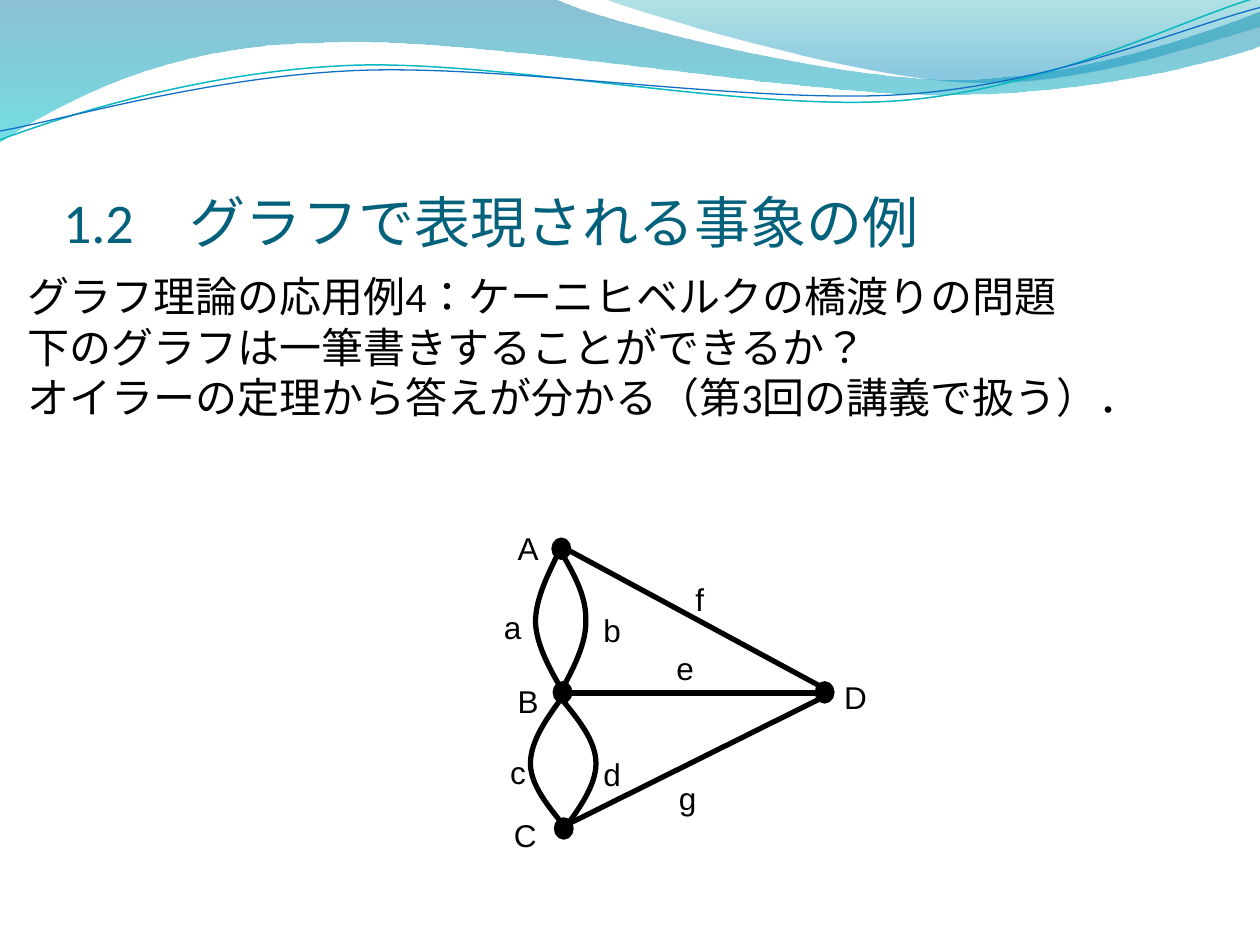
import pptx
import pptx.util
import pptx.dml.color
import pptx.enum.lang
import pptx.enum.shapes
import pptx.enum.text
import pptx.oxml.ns
import lxml.etree

Inches = pptx.util.Inches
Pt = pptx.util.Pt
RGBColor = pptx.dml.color.RGBColor
BLACK = RGBColor(0x00, 0x00, 0x00)
TITLE = RGBColor(0x04, 0x61, 0x7B)
DEEP = RGBColor(0x00, 0x74, 0xA1)
AQUA = RGBColor(0x00, 0xC6, 0xCF)
TEAL = RGBColor(0x00, 0xA1, 0xA9)
SKY = RGBColor(0x00, 0x8B, 0xBF)
CYAN = RGBColor(0x0A, 0xB8, 0xBF)
BLUE = RGBColor(0x0F, 0x6F, 0xC6)
JAPAN = pptx.enum.lang.MSO_LANGUAGE_ID.JAPANESE
qn = pptx.oxml.ns.qn


def trace(knots, steps, close):
    spots = [(Inches(x), Inches(y)) for x, y in knots]
    pen = slide.shapes.build_freeform(*spots[0])
    pen.add_line_segments(spots[1:], close=close)
    shape = pen.convert_to_shape()
    shape.shadow.inherit = False
    lines = iter(list(shape.element.iter(qn("a:lnTo"))))
    for step in steps:
        first = next(lines)
        if step == "C":
            first.tag = qn("a:cubicBezTo")
            for n in range(2):
                extra = next(lines)
                first.append(extra[0])
                extra.getparent().remove(extra)
    return shape


def style(para, name, size, tint):
    font = para.runs[0].font
    font.name, font.size, font.color.rgb = name, Pt(size), tint
    if name == "Calibri":
        font.language_id = JAPAN


deck = pptx.Presentation()
deck.slide_width = Inches(10)
deck.slide_height = Inches(7.5)
slide = deck.slides.add_slide(deck.slide_layouts[5])

broad = [
    (0, -0.01), (4.4, -0.01),
    (4.76, 0.17), (6.64, 0.63), (7.58, 0.63),
    (8.53, 0.63), (9.58, 0.26), (10, 0.09),
    (10.01, 0.36),
    (9.83, 0.44), (8.7, 0.76), (7.46, 0.75),
    (6.22, 0.75), (3.82, 0.28), (2.57, 0.34),
    (1.29, 0.35), (0.46, 0.83), (-0.01, 1.13)]
small = [
    (4.79, -0.01),
    (5.09, 0.11), (6.82, 0.62), (7.69, 0.65),
    (8.56, 0.69), (9.61, 0.32), (10, 0.21),
    (10, 0)]
waves = [
    (broad, "LCCLCCC", [(0, DEEP, 45), (1, AQUA, 55)]),
    (small, "CCL", [(0, TEAL, 30), (0.8, SKY, 45)]),
]
for knots, steps, tints in waves:
    wave = trace(knots, steps, True)
    wave.line.fill.background()
    wave.fill.gradient()
    wave.fill.gradient_angle = 270
    for stop, (place, tint, alpha) in zip(wave.fill.gradient_stops, tints):
        stop.position = place
        stop.color.rgb = tint
    for mark, (place, tint, alpha) in zip(wave.element.iter(qn("a:srgbClr")), tints):
        lxml.etree.SubElement(mark, qn("a:alpha")).set("val", str(alpha * 1000))

curves = [
    (CYAN, 0.85, [(0, 1.11), (0.48, 0.93), (1.58, 0.57), (2.77, 0.52),
                  (3.95, 0.47), (5.93, 0.89), (7.13, 0.8),
                  (8.33, 0.71), (9.38, 0.15), (9.98, -0.02)]),
    (BLUE, 0.75, [(0, 1.04), (0.47, 0.96), (1.64, 0.61), (2.83, 0.56),
                  (4.03, 0.51), (5.97, 0.83), (7.17, 0.75),
                  (8.36, 0.67), (9.41, 0.21), (10, 0.06)]),
    (BLACK, 3, [(4.46, 4.33), (4.36, 4.54), (4.25, 4.74), (4.25, 4.94),
                (4.26, 5.13), (4.37, 5.32), (4.48, 5.51)]),
    (BLACK, 3, [(4.48, 5.51), (4.34, 5.7), (4.21, 5.88), (4.21, 6.06),
                (4.21, 6.23), (4.35, 6.4), (4.49, 6.57)]),
    (BLACK, 3, [(4.44, 5.51), (4.55, 5.31), (4.66, 5.1), (4.65, 4.91),
                (4.65, 4.71), (4.54, 4.53), (4.43, 4.34)]),
    (BLACK, 3, [(4.46, 6.6), (4.6, 6.42), (4.73, 6.23), (4.73, 6.06),
                (4.73, 5.88), (4.59, 5.71), (4.45, 5.54)]),
]
for tint, width, knots in curves:
    curve = trace(knots, "C" * (len(knots) // 3), False)
    curve.fill.background()
    curve.line.color.rgb = tint
    curve.line.width = Pt(width)

title = slide.shapes.title
title.left, title.top = Inches(0.5), Inches(0.77)
title.width, title.height = Inches(9), Inches(1.25)
frame = title.text_frame
frame.text = "1.2　グラフで表現される事象の例"
frame.vertical_anchor = pptx.enum.text.MSO_ANCHOR.BOTTOM
frame.margin_left = frame.margin_right = frame.margin_bottom = 0
frame.margin_top = Inches(0.05)
frame.paragraphs[0].alignment = pptx.enum.text.PP_ALIGN.LEFT
style(frame.paragraphs[0], "Calibri", 32, TITLE)

body = slide.shapes.add_textbox(Inches(0.12), Inches(2.1), Inches(9.8), Inches(4.8))
body.text_frame.word_wrap = True
body.text_frame.text = "\n".join([
    "グラフ理論の応用例4：ケーニヒベルクの橋渡りの問題",
    "下のグラフは一筆書きすることができるか？",
    "オイラーの定理から答えが分かる（第3回の講義で扱う）．",
])
for para in body.text_frame.paragraphs:
    style(para, "Calibri", 24, BLACK)

edges = [
    (4.47, 5.5, 6.48, 5.5),
    (4.48, 4.35, 6.61, 5.5),
    (4.49, 6.55, 6.5, 5.55),
]
for edge in edges:
    line = slide.shapes.add_connector(
        pptx.enum.shapes.MSO_CONNECTOR.STRAIGHT, *map(Inches, edge))
    line.line.color.rgb = BLACK
    line.line.width = Pt(3)
    lxml.etree.SubElement(line.element.spPr, qn("a:effectLst"))

for x, y in [(4.39, 4.28), (4.4, 5.42), (4.41, 6.5), (6.48, 5.42)]:
    node = slide.shapes.add_shape(
        pptx.enum.shapes.MSO_SHAPE.OVAL,
        Inches(x), Inches(y), Inches(0.13), Inches(0.15))
    node.shadow.inherit = False
    node.fill.solid()
    node.fill.fore_color.rgb = BLACK
    node.line.color.rgb = BLACK
    node.line.width = Pt(2)

labels = [
    ("A", 4.01, 4.15, 0.28), ("B", 4.01, 5.36, 0.28),
    ("C", 3.98, 6.43, 0.29), ("D", 6.6, 5.33, 0.29),
    ("a", 3.9, 4.78, 0.26), ("b", 4.69, 4.8, 0.26),
    ("c", 3.95, 5.93, 0.25), ("d", 4.69, 5.94, 0.26),
    ("e", 5.27, 5.1, 0.26), ("f", 5.42, 4.55, 0.21),
    ("g", 5.29, 6.13, 0.26),
]
for name, x, y, width in labels:
    label = slide.shapes.add_textbox(Inches(x), Inches(y), Inches(width), Inches(0.31))
    frame = label.text_frame
    frame.word_wrap = False
    frame.auto_size = pptx.enum.text.MSO_AUTO_SIZE.SHAPE_TO_FIT_TEXT
    frame.text = name
    style(frame.paragraphs[0], "Arial", 18, BLACK)

deck.save("out.pptx")
